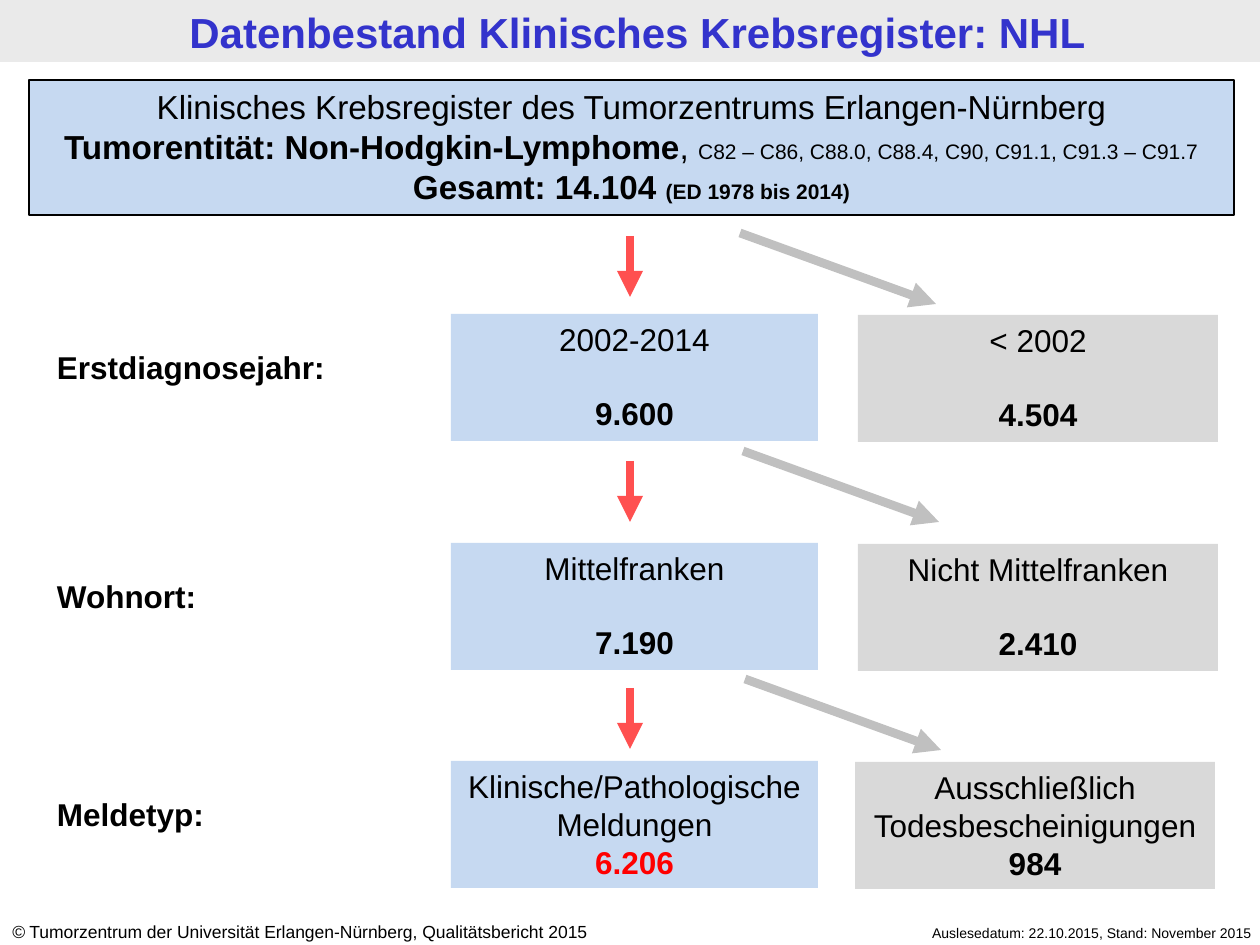
from lxml.etree import SubElement
from pptx import Presentation
from pptx.dml.color import RGBColor
from pptx.enum.shapes import MSO_CONNECTOR, MSO_SHAPE
from pptx.enum.text import MSO_ANCHOR, MSO_AUTO_SIZE, PP_ALIGN
from pptx.oxml.ns import qn
from pptx.util import Emu, Pt

SCALE = 914400 / 126
HUES = {
    "ink": "000000", "title": "3333CC", "bar": "EAEAEA", "blue": "C6D9F1",
    "gray": "D9D9D9", "red": "FF0000", "down": "FF5050", "side": "C0C0C0",
}


def px(num):
    return Emu(round(num * SCALE))


def hue(name):
    return RGBColor.from_string(HUES[name])


def write(para, text, size=18, bold=False, ital=False, color="ink", face="Arial"):
    run = para.add_run()
    run.text = text
    font = run.font
    font.name, font.size = face, Pt(size)
    font.bold, font.italic = bold, ital
    font.color.rgb = hue(color)


class Deck:
    def __init__(self):
        self.show = Presentation()
        self.show.slide_width, self.show.slide_height = px(1260), px(945)
        self.slide = self.show.slides.add_slide(self.show.slide_layouts[5])
        self.shapes = self.slide.shapes

    def fill(self, shape, lines, align, pad=(13, 6), gap=0):
        frame = shape.text_frame
        frame.word_wrap = True
        frame.auto_size = MSO_AUTO_SIZE.NONE
        frame.vertical_anchor = MSO_ANCHOR.TOP
        frame.margin_left = frame.margin_right = px(pad[0])
        frame.margin_top = frame.margin_bottom = px(pad[1])
        for pos, runs in enumerate(lines):
            para = frame.add_paragraph() if pos else frame.paragraphs[0]
            para.alignment = align
            if pos and gap:
                para.space_before = Pt(gap)
            for text, style in runs:
                write(para, text, **style)

    def title(self, text, left, top, width, height):
        shape = self.shapes.title
        shape.left, shape.top = px(left), px(top)
        shape.width, shape.height = px(width), px(height)
        runs = [(text, {"size": 24, "bold": True, "color": "title"})]
        self.fill(shape, [runs], PP_ALIGN.CENTER, (11, 5))

    def box(self, left, top, width, height, color, lines=(), line=None, gap=0):
        shape = self.shapes.add_shape(
            MSO_SHAPE.RECTANGLE, px(left), px(top), px(width), px(height))
        shape.shadow.inherit = False
        shape.fill.solid()
        shape.fill.fore_color.rgb = hue(color)
        if line:
            shape.line.color.rgb = hue("ink")
            shape.line.width = Pt(line)
        else:
            shape.line.fill.background()
        self.fill(shape, lines, PP_ALIGN.CENTER, gap=gap)
        return shape

    def bar(self, width, height):
        shape = self.box(0, 0, width, height, "bar")
        self.shapes.title.element.addprevious(shape.element)

    def label(self, left, top, width, height, runs, align=PP_ALIGN.LEFT):
        shape = self.shapes.add_textbox(px(left), px(top), px(width), px(height))
        self.fill(shape, [runs], align)

    def arrow(self, left, top, wide, high, color):
        line = self.shapes.add_connector(
            MSO_CONNECTOR.STRAIGHT, px(left), px(top), px(left + wide), px(top + high))
        line.line.color.rgb = hue(color)
        line.line.width = Pt(5)
        SubElement(line.line._get_or_add_ln(), qn("a:tailEnd"), type="triangle")
        SubElement(line.element.spPr, qn("a:effectLst"))


def main():
    deck = Deck()
    deck.bar(1260, 62)
    deck.title("Datenbestand Klinisches Krebsregister: NHL", 19, 1, 1237, 62)

    big, bold = {"size": 19}, {"size": 19, "bold": True}
    deck.box(29, 80, 1205, 135, "blue", [
        [("Klinisches Krebsregister des Tumorzentrums Erlangen-Nürnberg", big)],
        [("Tumorentität: Non-Hodgkin-Lymphome", bold), (", ", big),
         ("C82 – C86, C88.0, C88.4, C90, C91.1, C91.3 – C91.7", {"size": 12})],
        [("Gesamt: 14.104 ", bold),
         ("(ED 1978 bis 2014)", {"size": 12, "bold": True})],
    ], line=0.75)

    steps = [
        (314, "Erstdiagnosejahr:", "2002-2014", "9.600", "ink",
         858, "< 2002", "4.504", 20.7, 236, (740, 233)),
        (543, "Wohnort:", "Mittelfranken", "7.190", "ink",
         858, "Nicht Mittelfranken", "2.410", 20.7, 461, (743, 451)),
        (761, "Meldetyp:", "Klinische/Pathologische Meldungen", "6.206", "red",
         855, "Ausschließlich Todesbescheinigungen", "984", 0, 688, (745, 679)),
    ]
    for top, name, kept, count, color, left, out, rest, gap, down, side in steps:
        deck.label(44, top + 28, 348, 50, [(name, {"bold": True})])
        deck.box(451, top, 367, 127, "blue",
                 [[(kept, {})], [(count, {"bold": True, "color": color})]], gap=gap)
        deck.box(left, top + 1, 360, 127, "gray",
                 [[(out, {})], [(rest, {"bold": True})]], gap=gap)
        deck.arrow(630, down, 0, 61, "down")
        deck.arrow(*side, 196, 71, "side")

    deck.label(838, 919, 427, 30,
               [("Auslesedatum: 22.10.2015, Stand: November 2015", {"size": 8})],
               PP_ALIGN.RIGHT)
    deck.label(-1, 915, 660, 34, [
        ("©", {"size": 10, "ital": True}),
        (" Tumorzentrum der Universität Erlangen-Nürnberg, Qualitätsbericht 2015",
         {"size": 10}),
    ])
    deck.show.save("out.pptx")


if __name__ == "__main__":
    main()
